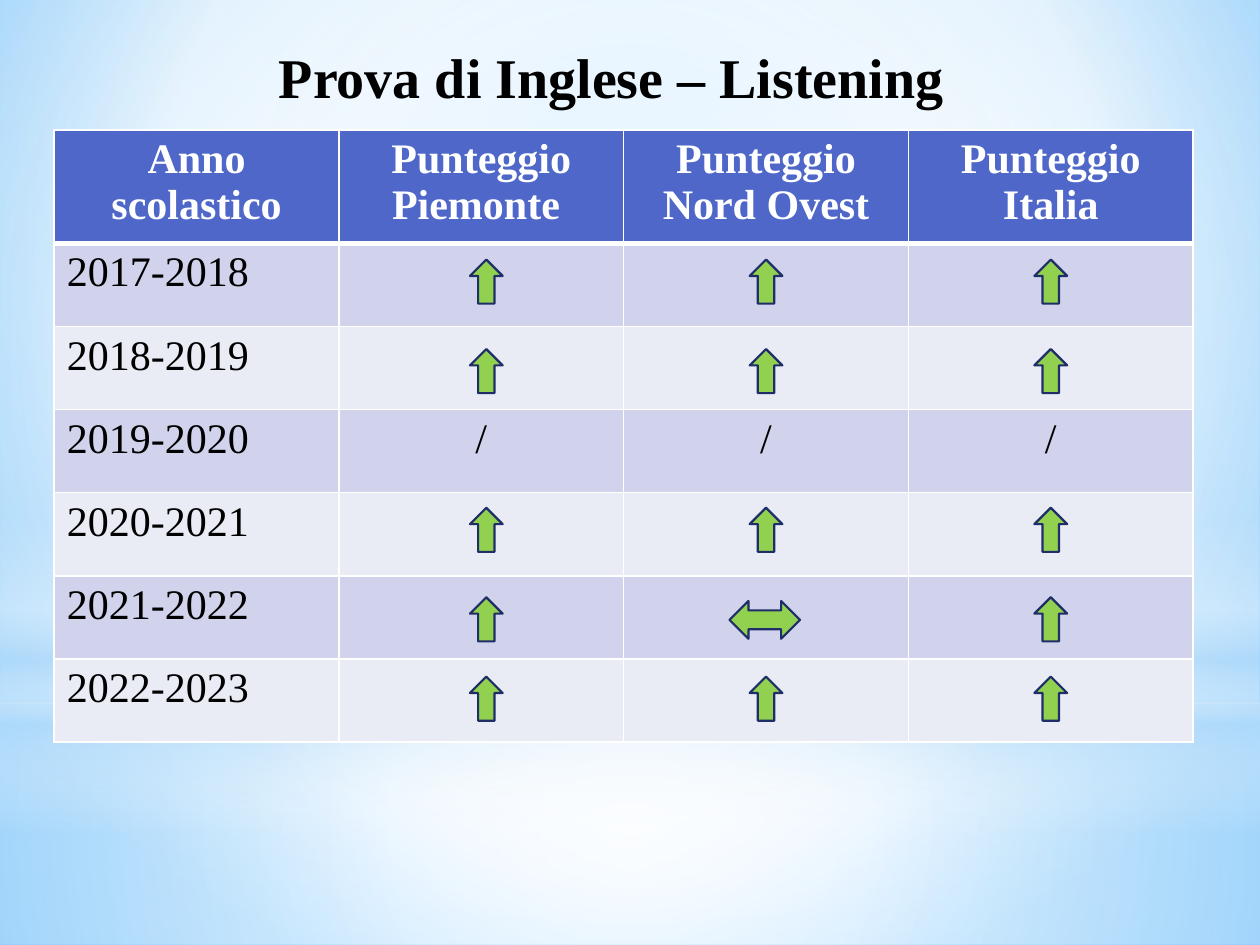
from lxml.etree import SubElement
from pptx import Presentation
from pptx.dml.color import RGBColor
from pptx.enum.shapes import MSO_SHAPE
from pptx.enum.text import MSO_ANCHOR, MSO_AUTO_SIZE, PP_ALIGN
from pptx.oxml.ns import qn
from pptx.util import Inches, Pt

WHITE = RGBColor(0xFF, 0xFF, 0xFF)
BLACK = RGBColor(0x00, 0x00, 0x00)
SKY = RGBColor(0x9E, 0xD5, 0xFF)
DEEP_SKY = RGBColor(0x5B, 0xB9, 0xFF)
PALE_BLUE = RGBColor(0xB4, 0xDC, 0xFA)
HEADER_BLUE = RGBColor(0x4E, 0x67, 0xC8)
BANDS = (RGBColor(0xD0, 0xD3, 0xEB), RGBColor(0xE9, 0xEB, 0xF5))
GREEN = RGBColor(0x92, 0xD0, 0x50)
NAVY = RGBColor(0x1F, 0x2E, 0x69)

CENTER = (50, 50, 50, 50)
HEADERS = ("Anno scolastico", "Punteggio Piemonte ", "Punteggio Nord Ovest",
           "Punteggio Italia")
YEARS = ("2017-2018", "2018-2019", "2019-2020", "2020-2021", "2021-2022",
         "2022-2023")
UNTESTED_YEAR = "2019-2020"

# Arrow grid: one left edge per score column, one top edge per tested year
ARROW_LEFTS = (3.73, 5.95, 8.21)
ARROW_TOPS = (2.06, 2.77, 4.03, 4.74, 5.37)
STABLE = (3, 1)  # year and column of the unchanged score


class ScoreSlide:
    font_name = "Times New Roman"

    def __init__(self, slide):
        self.slide = slide

    def format_text(self, paragraph, alignment, **values):
        paragraph.alignment = alignment
        for name, value in {"name": self.font_name, **values}.items():
            if name == "color":
                paragraph.font.color.rgb = value
            else:
                setattr(paragraph.font, name, value)

    def gradient(self, fill, owner, stops, focus=None, angle=0):
        """Stops are (position, colour, opacity); focus makes it circular."""
        fill.gradient()
        gradient = owner.find(".//" + qn("a:gradFill"))
        for child in list(gradient):
            gradient.remove(child)
        stop_list = SubElement(gradient, qn("a:gsLst"))
        for position, color, opacity in stops:
            stop = SubElement(stop_list, qn("a:gs"), pos=str(position * 1000))
            color_element = SubElement(stop, qn("a:srgbClr"), val=str(color))
            SubElement(color_element, qn("a:alpha"), val=str(opacity * 1000))
        if focus:
            circle = SubElement(gradient, qn("a:path"), path="circle")
            edges = {side: str(value * 1000) for side, value in zip("ltrb", focus)}
            SubElement(circle, qn("a:fillToRect"), **edges)
        else:
            SubElement(gradient, qn("a:lin"), ang=str(angle * 60000), scaled="0")

    def background(self, stops, focus):
        self.gradient(self.slide.background.fill, self.slide.element, stops, focus)

    def shape(self, kind, left, top, width, height):
        shape = self.slide.shapes.add_shape(
            kind, Inches(left), Inches(top), Inches(width), Inches(height))
        shape.shadow.inherit = False
        return shape

    def glow(self, kind, top, height, stops, focus=None, angle=0):
        shape = self.shape(kind, 0, top, 10, height)
        shape.line.fill.background()
        self.gradient(shape.fill, shape.element, stops, focus, angle)

    def title(self, text, left, top, width, height):
        title = self.slide.shapes.title
        box = {"left": left, "top": top, "width": width, "height": height}
        for name, value in box.items():
            setattr(title, name, Inches(value))
        frame = title.text_frame
        frame.text = text
        frame.word_wrap = True
        frame.auto_size = MSO_AUTO_SIZE.SHAPE_TO_FIT_TEXT
        frame.vertical_anchor = MSO_ANCHOR.TOP
        self.format_text(frame.paragraphs[0], PP_ALIGN.CENTER,
                         size=Pt(32), bold=True, color=BLACK)
        # Bring the title in front of the backdrop
        self.slide.shapes.element.append(title.element)

    def cell(self, cell, text, fill, alignment, color, bold, top=1, bottom=1):
        properties = cell._tc.get_or_add_tcPr()
        for side, width in {"L": 1, "R": 1, "T": top, "B": bottom}.items():
            border = SubElement(properties, qn("a:ln" + side), w=str(Pt(width)))
            solid = SubElement(border, qn("a:solidFill"))
            SubElement(solid, qn("a:srgbClr"), val=str(WHITE))
        cell.fill.solid()
        cell.fill.fore_color.rgb = fill
        cell.text = text
        self.format_text(cell.text_frame.paragraphs[0], alignment,
                         size=Pt(24), bold=bold, color=color)

    def table(self, left, top, column_width, row_height, header_height):
        rows, columns = len(YEARS) + 1, len(HEADERS)
        table = self.slide.shapes.add_table(
            rows, columns, Inches(left), Inches(top),
            Inches(column_width * columns),
            Inches(header_height + row_height * len(YEARS))).table
        for column in table.columns:
            column.width = Inches(column_width)
        for row in table.rows:
            row.height = Inches(row_height)
        table.rows[0].height = Inches(header_height)
        for index, header in enumerate(HEADERS):
            self.cell(table.cell(0, index), header, HEADER_BLUE,
                      PP_ALIGN.CENTER, WHITE, True, bottom=3)
        for row, year in enumerate(YEARS, start=1):
            mark = "/" if year == UNTESTED_YEAR else ""
            for index, text in enumerate([year] + [mark] * (columns - 1)):
                self.cell(table.cell(row, index), text, BANDS[(row - 1) % 2],
                          PP_ALIGN.CENTER if index else PP_ALIGN.LEFT,
                          BLACK, False, top=3 if row == 1 else 1)

    def arrow(self, kind, left, top, width, height):
        arrow = self.shape(kind, left, top, width, height)
        arrow.fill.solid()
        arrow.fill.fore_color.rgb = GREEN
        arrow.line.color.rgb = NAVY
        arrow.line.width = Pt(1.25)


def main():
    presentation = Presentation()
    presentation.slide_width = Inches(10)
    presentation.slide_height = Inches(7.5)
    page = ScoreSlide(presentation.slides.add_slide(presentation.slide_layouts[5]))

    # Backdrop
    page.background([(0, SKY, 100), (60, WHITE, 100), (100, DEEP_SKY, 100)],
                    (20, 10, 20, 60))
    page.glow(MSO_SHAPE.RECTANGLE, 5.58, 1.92,
              [(0, WHITE, 91), (37, WHITE, 76), (100, PALE_BLUE, 79)], CENTER)
    page.glow(MSO_SHAPE.RECTANGLE, 0, 5.58,
              [(0, WHITE, 89), (48, WHITE, 62), (100, PALE_BLUE, 79)], CENTER)
    page.glow(MSO_SHAPE.RECTANGLE, 4.12, 2.5,
              [(0, WHITE, 0), (29, WHITE, 30), (45, PALE_BLUE, 40),
               (55, WHITE, 26), (65, PALE_BLUE, 60), (100, WHITE, 0)], angle=90)
    page.glow(MSO_SHAPE.OVAL, 1.75, 5.58,
              [(0, WHITE, 100), (56, WHITE, 0)], CENTER)

    # Title and scores
    page.title("Prova di Inglese – Listening", 1.38, 0.29, 6.95, 0.64)
    page.table(0.43, 1.03, 2.26, 0.66, 0.84)

    # Trend arrows
    for row, top in enumerate(ARROW_TOPS):
        for column, left in enumerate(ARROW_LEFTS):
            if (row, column) == STABLE:
                page.arrow(MSO_SHAPE.LEFT_RIGHT_ARROW, 5.79, 4.77, 0.56, 0.3)
            else:
                page.arrow(MSO_SHAPE.UP_ARROW, left, top, 0.26, 0.35)

    presentation.save("out.pptx")


if __name__ == "__main__":
    main()
